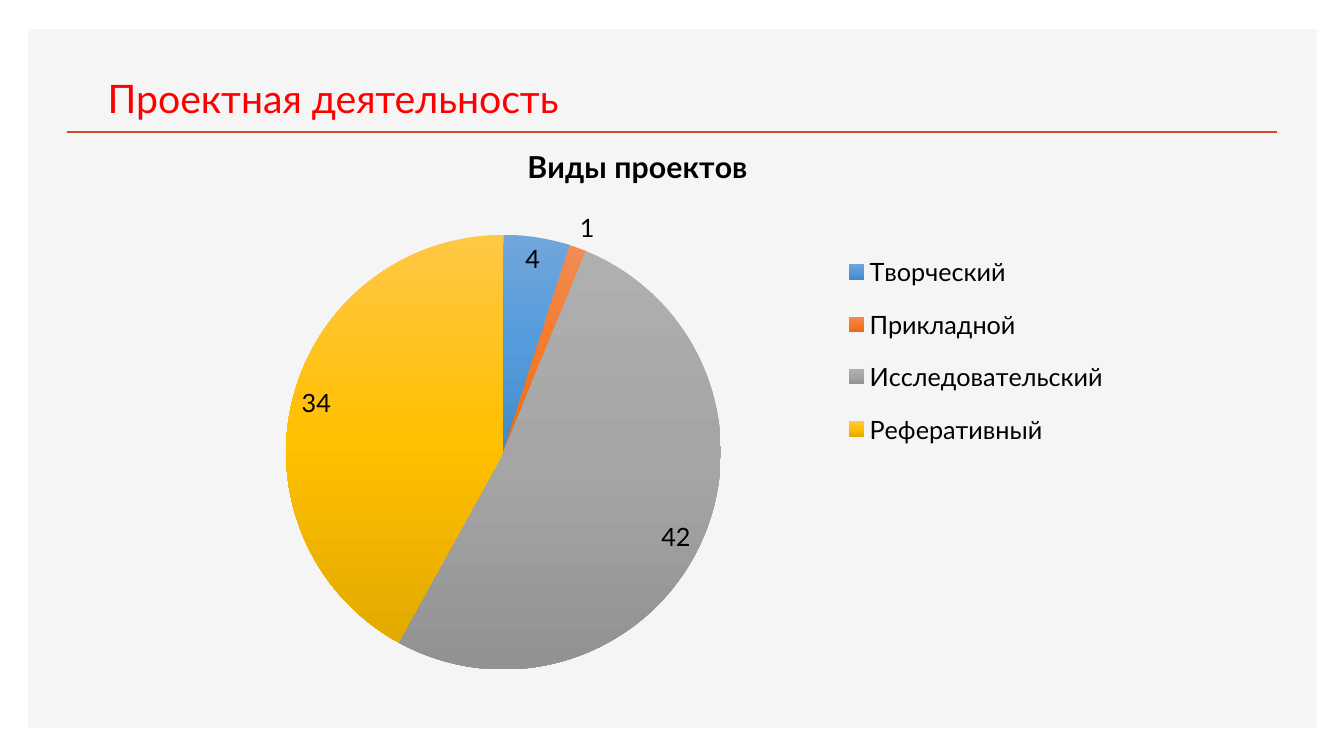
from copy import deepcopy
from lxml import etree
from pptx import Presentation
from pptx.chart.data import CategoryChartData as Data
from pptx.dml.color import RGBColor as RGB
from pptx.enum.chart import XL_CHART_TYPE as Kind, XL_LABEL_POSITION as Spot
from pptx.enum.chart import XL_LEGEND_POSITION as Side
from pptx.enum.shapes import MSO_CONNECTOR as Line, MSO_SHAPE as Shape
from pptx.enum.text import MSO_ANCHOR as Anchor
from pptx.oxml import parse_xml
from pptx.oxml.ns import nsdecls, qn
from pptx.util import Inches, Pt

PANEL = RGB(0xF5, 0xF5, 0xF5)
RULE = RGB(0xD2, 0x47, 0x26)
RED = RGB(0xFF, 0, 0)
BLACK = RGB(0, 0, 0)
BLUES = RGB(0x71, 0xA6, 0xDB), RGB(0x54, 0x9B, 0xDB), RGB(0x43, 0x8A, 0xC9)
REDS = RGB(0xF1, 0x8C, 0x55), RGB(0xF6, 0x7A, 0x28), RGB(0xE5, 0x6B, 0x17)
GREYS = RGB(0xAF, 0xAF, 0xAF), RGB(0xA5, 0xA5, 0xA5), RGB(0x92, 0x92, 0x92)
GOLDS = RGB(0xFF, 0xC7, 0x46), RGB(0xFF, 0xC0, 0), RGB(0xE3, 0xAA, 0)
FONT = "Lato"


def style(font, size, color, bold=False):
    font.name = FONT
    font.size = Pt(size)
    font.bold = bold
    font.color.rgb = color


def layout(x, y, w, h, inner=False):
    target = '<c:layoutTarget val="inner"/>' if inner else ""
    return parse_xml(
        f'<c:layout {nsdecls("c")}><c:manualLayout>{target}'
        '<c:xMode val="edge"/><c:yMode val="edge"/>'
        f'<c:x val="{x}"/><c:y val="{y}"/><c:w val="{w}"/><c:h val="{h}"/>'
        '</c:manualLayout></c:layout>')


deck = Presentation()
deck.slide_width = Inches(13.33)
deck.slide_height = Inches(7.5)
slide = deck.slides.add_slide(deck.slide_layouts[6])
shapes = slide.shapes

panel = shapes.add_shape(Shape.RECTANGLE, Inches(0.28), Inches(0.29), Inches(12.78), Inches(6.93))
panel.shadow.inherit = False
panel.fill.solid()
panel.fill.fore_color.rgb = PANEL
panel.line.fill.background()

rule = shapes.add_connector(Line.STRAIGHT, Inches(0.66), Inches(1.31), Inches(12.67), Inches(1.31))
rule.line.color.rgb = RULE
rule.line.width = Pt(2)
etree.SubElement(rule._element.spPr, qn("a:effectLst"))

title = shapes.add_textbox(Inches(0.97), Inches(0.37), Inches(11.33), Inches(0.88))
frame = title.text_frame
frame.word_wrap = True
frame.vertical_anchor = Anchor.BOTTOM
frame.text = "Проектная деятельность"
style(frame.paragraphs[0].runs[0].font, 28, RED)

data = Data()
data.categories = ["Творческий", "Прикладной", "Исследовательский", "Реферативный"]
data.add_series("Виды проектов", [4, 1, 42, 34])
chart = shapes.add_chart(Kind.PIE, Inches(1), Inches(1.21), Inches(10.65), Inches(5.6), data).chart
style(chart.font, 18, BLACK)
chart.has_title = True
head = chart.chart_title.text_frame
head.text = "Виды проектов"
style(head.paragraphs[0].runs[0].font, 21.6, BLACK, True)

plot = chart.plots[0]
plot.vary_by_categories = True
plot.has_data_labels = True
labels = plot.data_labels
labels.show_value = True
labels.show_percentage = False
labels.position = Spot.BEST_FIT
style(labels.font, 18, BLACK)

pie = plot.series[0]
for index, shades in enumerate([BLUES, REDS, GREYS, GOLDS]):
    fill = pie.points[index].format.fill
    fill.gradient()
    fill.gradient_angle = 270
    stops = pie._element.findall(".//" + qn("a:gsLst"))[-1]
    stops.append(deepcopy(stops[-1]))
    for stop, shade, place in zip(fill.gradient_stops, shades, [0, 0.5, 1]):
        stop.color.rgb = shade
        stop.position = place

chart.has_legend = True
legend = chart.legend
legend.position = Side.RIGHT
legend.include_in_layout = False
style(legend.font, 18, BLACK)

area = chart._chartSpace.chart.plotArea
for old in area.findall(qn("c:layout")):
    area.remove(old)
area.insert(0, layout(0.17, 0.2, 0.41, 0.77, True))
key = legend._element
for old in key.findall(qn("c:layout")):
    key.remove(old)
key.find(qn("c:legendPos")).addnext(layout(0.68, 0.2, 0.27, 0.41))

deck.save("out.pptx")
